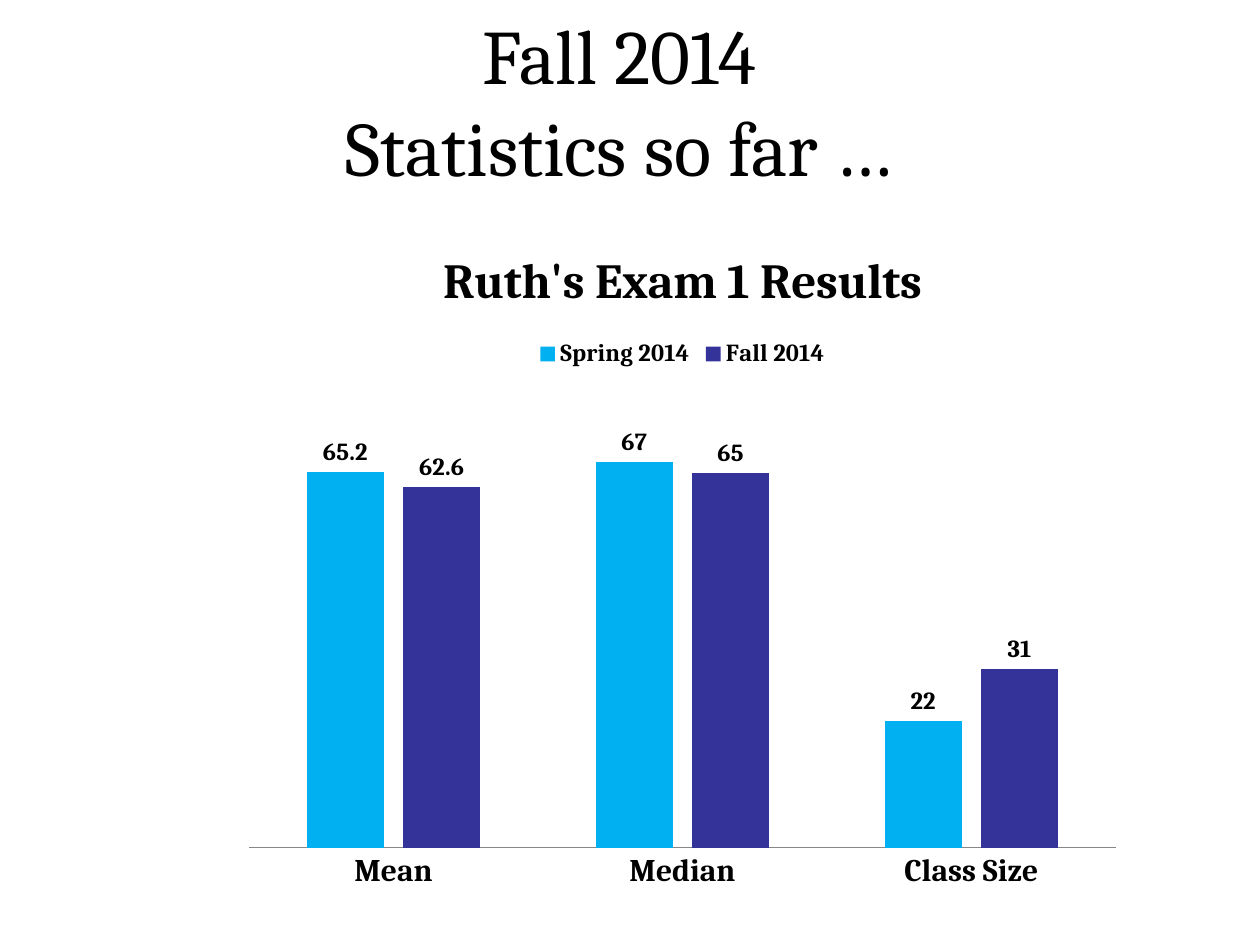
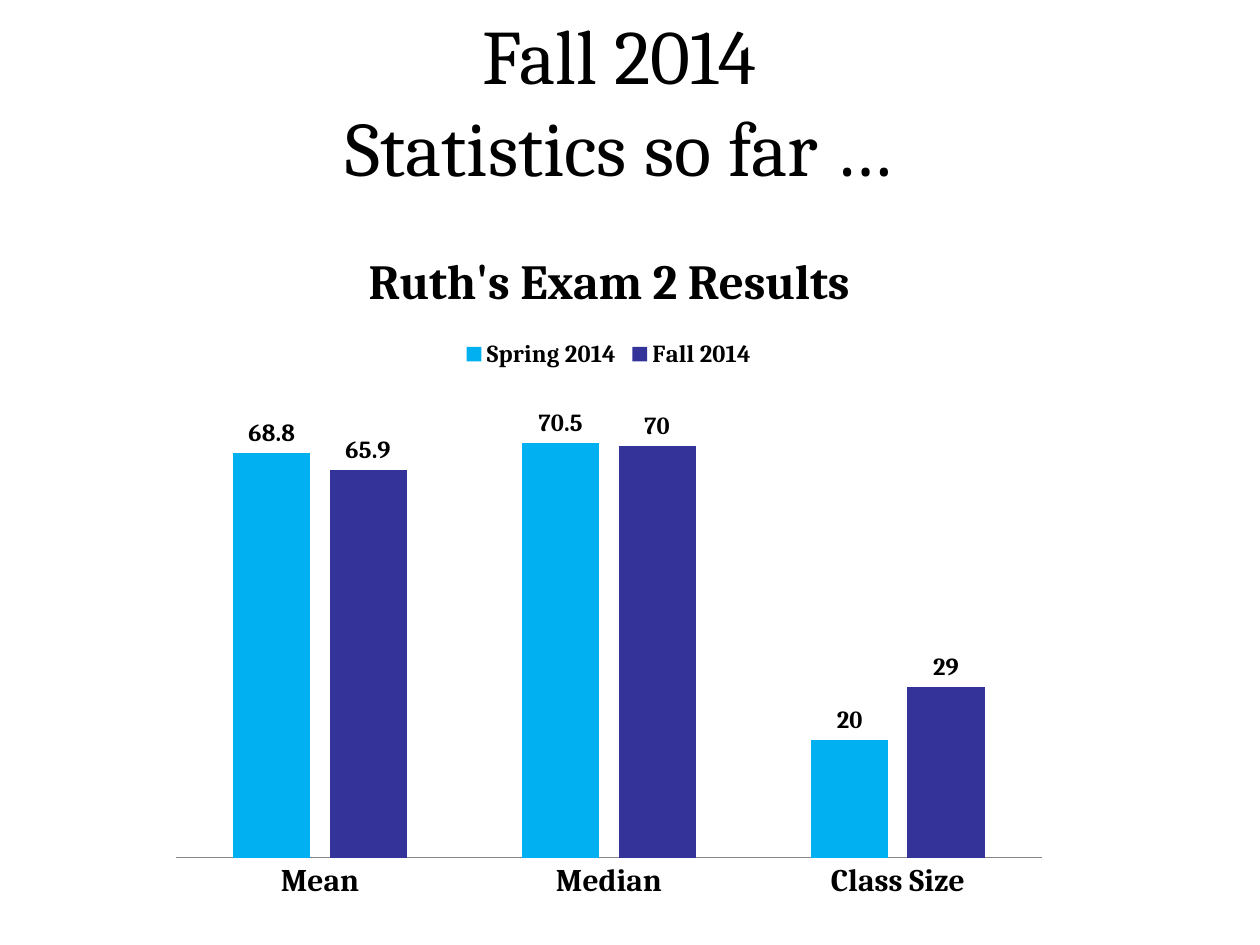
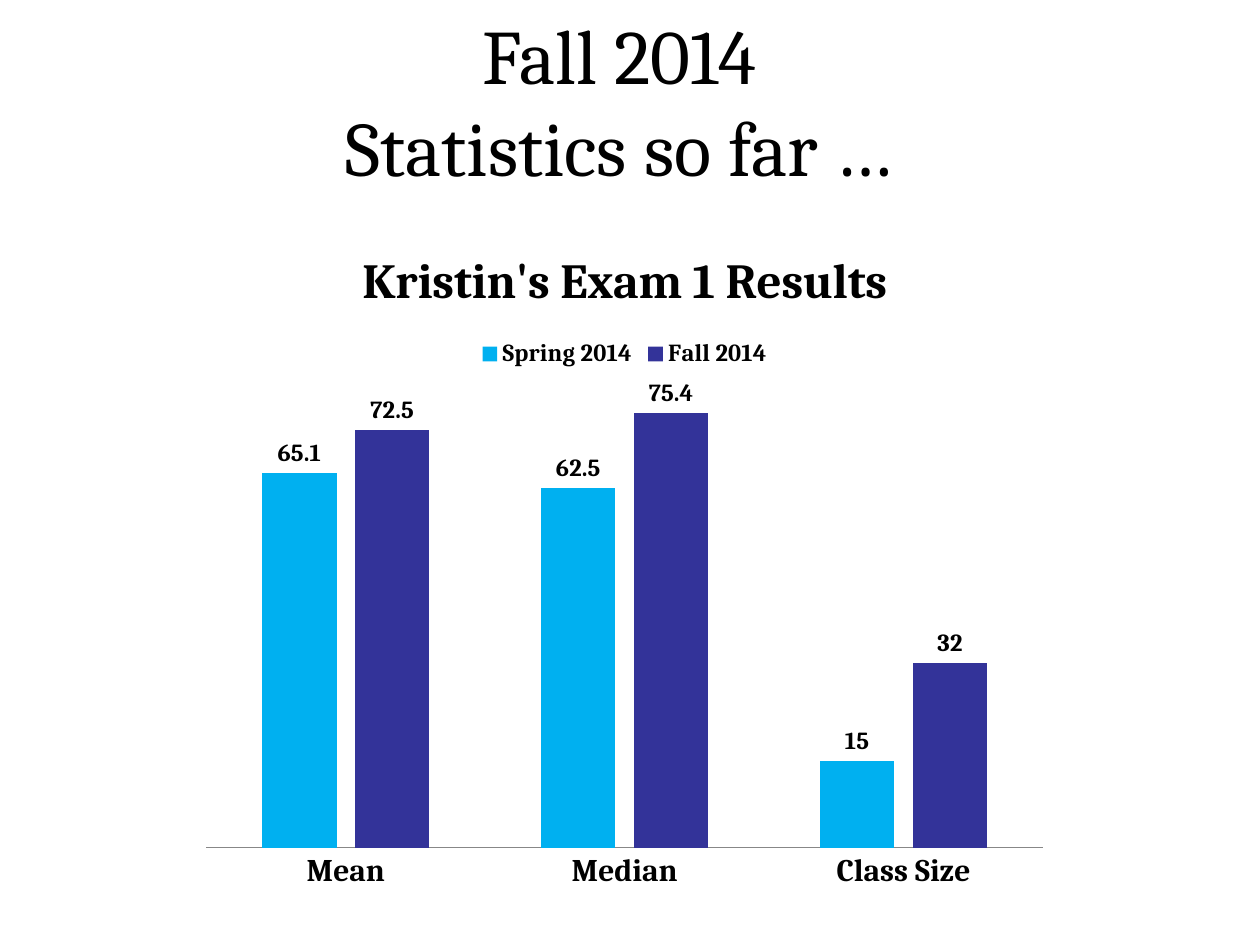
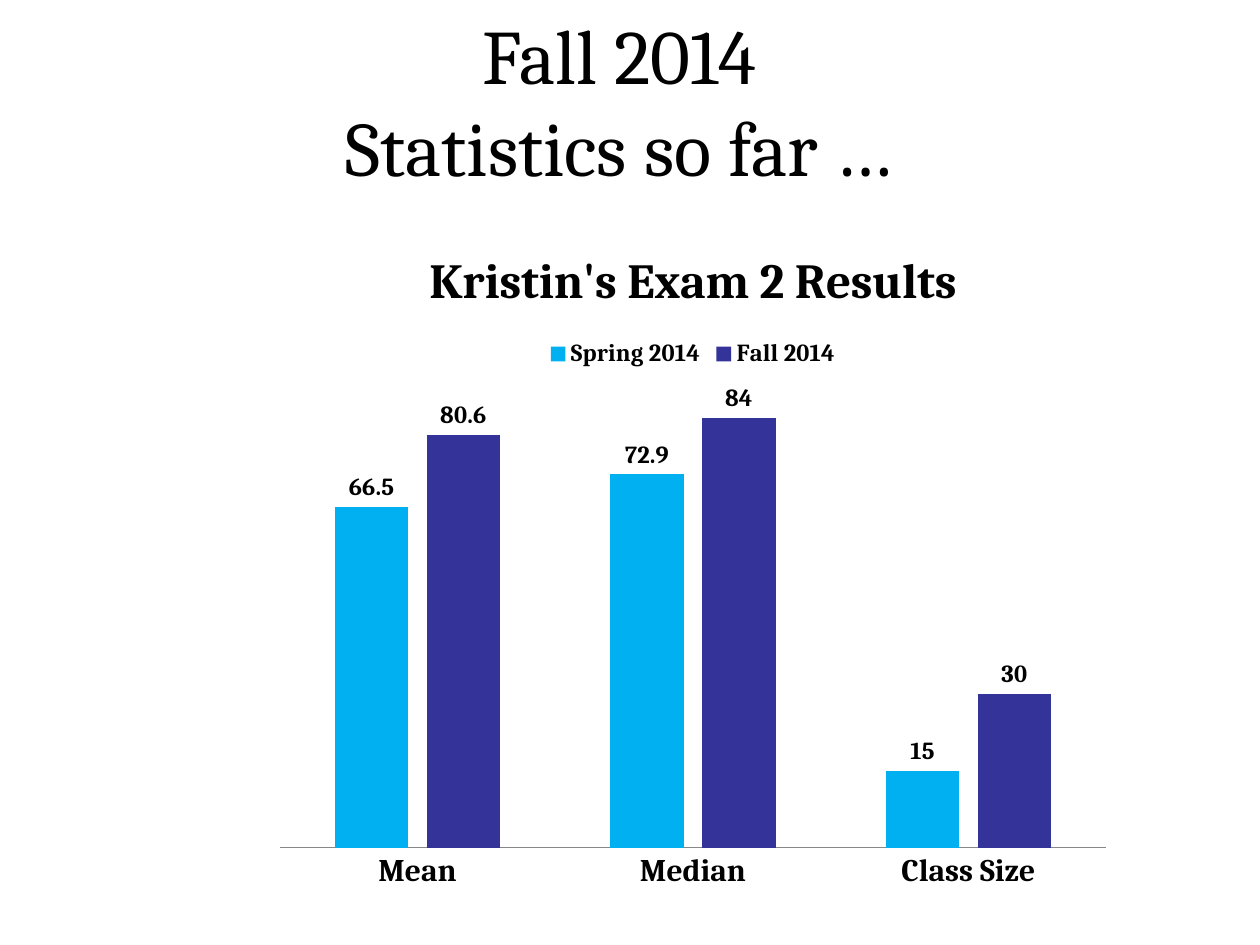
from pptx import Presentation
from pptx.chart.data import CategoryChartData
from pptx.dml.color import RGBColor
from pptx.enum.chart import XL_CHART_TYPE, XL_LABEL_POSITION, XL_LEGEND_POSITION, XL_TICK_MARK
from pptx.enum.text import MSO_ANCHOR, PP_ALIGN
from pptx.util import Pt

FONT = "Cambria"
COLORS = {"text": "000000", "axis": "878787", "Spring 2014": "00B0F0", "Fall 2014": "333399"}
CATEGORIES = ["Mean", "Median", "Class Size"]
CHART_TOP = 126

# Per slide: chart title, left, width, height, axis maximum, values by term
RESULTS = [
    ("Ruth's Exam 1 Results", 132, 516, 390, 80,
     {"Spring 2014": (65.2, 67, 22), "Fall 2014": (62.6, 65, 31)}),
    ("Ruth's Exam 2 Results", 90, 516, 396, 80,
     {"Spring 2014": (68.8, 70.5, 20), "Fall 2014": (65.9, 70, 29)}),
    ("Kristin's Exam 1 Results", 108, 498, 390, 80,
     {"Spring 2014": (65.1, 62.5, 15), "Fall 2014": (72.5, 75.4, 32)}),
    ("Kristin's Exam 2 Results", 150, 492, 390, 90,
     {"Spring 2014": (66.5, 72.9, 15), "Fall 2014": (80.6, 84, 30)}),
]


def format_font(font, size, bold=False):
    font.name = FONT
    font.size = Pt(size)
    font.bold = bold
    font.color.rgb = RGBColor.from_string(COLORS["text"])


def write_text(text_frame, text, size, bold=False, align=PP_ALIGN.CENTER):
    paragraph = text_frame.paragraphs[0]
    paragraph.text = text
    paragraph.alignment = align
    for run in paragraph.runs:
        format_font(run.font, size, bold)


presentation = Presentation()
presentation.slide_width = Pt(720)
presentation.slide_height = Pt(540)

for chart_title, left, width, height, axis_maximum, terms in RESULTS:
    slide = presentation.slides.add_slide(presentation.slide_layouts[6])

    # Slide title
    title_box = slide.shapes.add_textbox(Pt(18), Pt(12), Pt(672), Pt(90))
    title_box.text_frame.word_wrap = True
    title_box.text_frame.vertical_anchor = MSO_ANCHOR.MIDDLE
    write_text(title_box.text_frame, "Fall 2014\nStatistics so far …", size=44)

    # Exam chart
    chart_data = CategoryChartData()
    chart_data.categories = CATEGORIES
    for term, values in terms.items():
        chart_data.add_series(term, values)
    chart = slide.shapes.add_chart(
        XL_CHART_TYPE.COLUMN_CLUSTERED, Pt(left), Pt(CHART_TOP), Pt(width), Pt(height), chart_data
    ).chart
    format_font(chart.font, 10)

    # Chart title and legend
    chart.has_title = True
    write_text(chart.chart_title.text_frame, chart_title, size=28, bold=True)
    chart.chart_title.include_in_layout = False
    chart.has_legend = True
    chart.legend.position = XL_LEGEND_POSITION.TOP
    chart.legend.include_in_layout = False
    format_font(chart.legend.font, 14, bold=True)

    # Axes
    category_axis = chart.category_axis
    category_axis.major_tick_mark = XL_TICK_MARK.NONE
    category_axis.format.line.color.rgb = RGBColor.from_string(COLORS["axis"])
    format_font(category_axis.tick_labels.font, 18, bold=True)
    value_axis = chart.value_axis
    value_axis.visible = False
    value_axis.has_major_gridlines = False
    value_axis.minimum_scale = 0
    value_axis.maximum_scale = axis_maximum

    # Columns and their labels
    plot = chart.plots[0]
    plot.gap_width = 150
    plot.overlap = -25
    plot.vary_by_categories = False
    for series in plot.series:
        series.format.fill.solid()
        series.format.fill.fore_color.rgb = RGBColor.from_string(COLORS[series.name])
        labels = series.data_labels
        labels.show_value = True
        labels.position = XL_LABEL_POSITION.OUTSIDE_END
        format_font(labels.font, 14, bold=True)

presentation.save("out.pptx")
